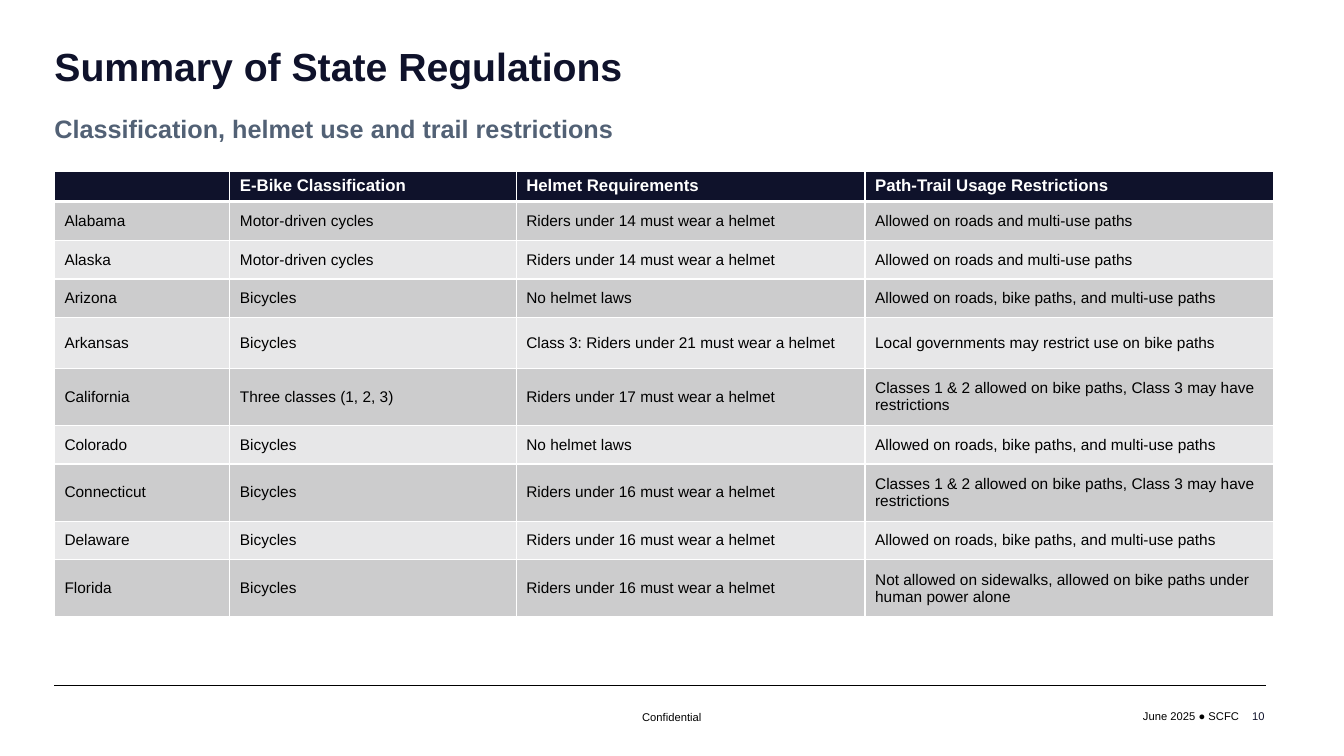
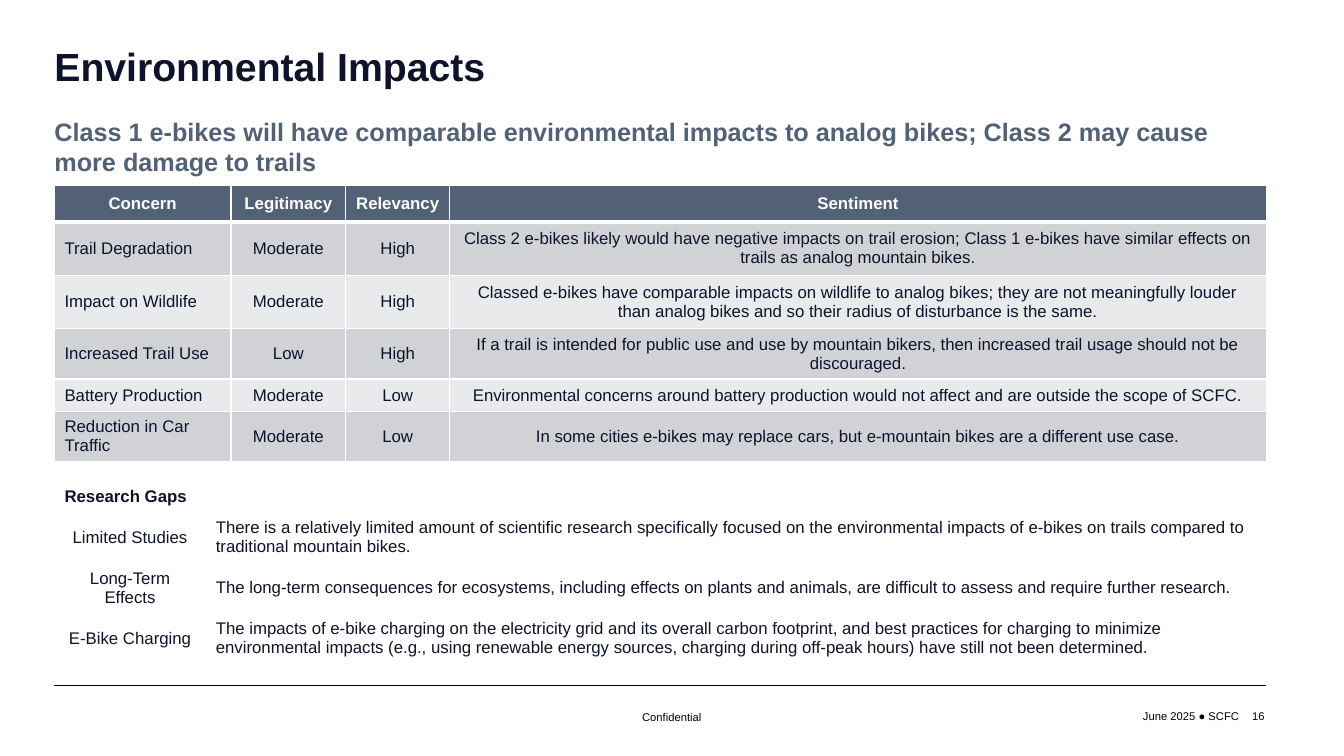
"""Builds two slides of an e-bike policy briefing."""
from dataclasses import dataclass

from lxml import etree
from pptx import Presentation
from pptx.dml.color import RGBColor
from pptx.enum import shapes, text
from pptx.oxml import ns
from pptx.util import Inches, Pt

LEFT, CENTER, RIGHT = text.PP_ALIGN.LEFT, text.PP_ALIGN.CENTER, text.PP_ALIGN.RIGHT
TOP, MIDDLE = text.MSO_ANCHOR.TOP, text.MSO_ANCHOR.MIDDLE


@dataclass(frozen=True)
class Theme:
    """Colours, type sizes and margins shared by the slides."""
    font: str = "Arial"
    navy: str = "0F122B"
    slate: str = "526175"
    black: str = "000000"
    white: str = "FFFFFF"
    gray_bands: tuple = ("CCCCCD", "E7E7E8")
    cool_bands: tuple = ("D1D2D6", "E9EAEC")
    title: int = 28
    subtitle: int = 18
    body: int = 12
    compact: int = 11
    footer: int = 8
    left: float = 0.54
    width: float = 12.02


THEME = Theme()

STATE_COLUMNS = (1.74, 2.84, 3.46, 4.05)
STATE_HEIGHTS = (0.28, 0.38, 0.38, 0.38, 0.5, 0.55, 0.38, 0.55, 0.38, 0.55)
MULTI_USE = "Allowed on roads and multi-use paths"
ALL_PATHS = "Allowed on roads, bike paths, and multi-use paths"
BY_CLASS = "Classes 1 & 2 allowed on bike paths, Class 3 may have restrictions"
NO_HELMET = "No helmet laws"


def helmet_under(age):
    """Return the helmet rule for riders below an age."""
    return f"Riders under {age} must wear a helmet"


STATES = (
    ("", "E-Bike Classification", "Helmet Requirements", "Path-Trail Usage Restrictions"),
    ("Alabama", "Motor-driven cycles", helmet_under(14), MULTI_USE),
    ("Alaska", "Motor-driven cycles", helmet_under(14), MULTI_USE),
    ("Arizona", "Bicycles", NO_HELMET, ALL_PATHS),
    ("Arkansas", "Bicycles", f"Class 3: {helmet_under(21)}",
     "Local governments may restrict use on bike paths"),
    ("California", "Three classes (1, 2, 3)", helmet_under(17), BY_CLASS),
    ("Colorado", "Bicycles", NO_HELMET, ALL_PATHS),
    ("Connecticut", "Bicycles", helmet_under(16), BY_CLASS),
    ("Delaware", "Bicycles", helmet_under(16), ALL_PATHS),
    ("Florida", "Bicycles", helmet_under(16),
     "Not allowed on sidewalks, allowed on bike paths under human power alone"),
)

CONCERN_COLUMNS = (1.75, 1.14, 1.03, 8.1)
CONCERN_HEIGHTS = (0.36, 0.53, 0.53, 0.48, 0.32, 0.48)
CONCERNS = (
    ("Concern", "Legitimacy", "Relevancy", "Sentiment"),
    ("Trail Degradation", "Moderate", "High",
     "Class 2 e-bikes likely would have negative impacts on trail erosion; Class 1 e-bikes "
     "have similar effects on trails as analog mountain bikes."),
    ("Impact on Wildlife", "Moderate", "High",
     "Classed e-bikes have comparable impacts on wildlife to analog bikes; they are not "
     "meaningfully louder than analog bikes and so their radius of disturbance is the same."),
    ("Increased Trail Use", "Low", "High",
     "If a trail is intended for public use and use by mountain bikers, then increased trail "
     "usage should not be discouraged."),
    ("Battery Production", "Moderate", "Low",
     "Environmental concerns around battery production would not affect and are outside "
     "the scope of SCFC."),
    ("Reduction in Car Traffic", "Moderate", "Low",
     "In some cities e-bikes may replace cars, but e-mountain bikes are a different use case."),
)

GAP_COLUMNS = (1.5, 10.52)
GAP_HEIGHTS = (0.29, 0.48, 0.48, 0.48)
GAPS = (
    ("Research Gaps", ""),
    ("Limited Studies",
     "There is a relatively limited amount of scientific research specifically focused on the "
     "environmental impacts of e-bikes on trails compared to traditional mountain bikes."),
    ("Long-Term Effects",
     "The long-term consequences for ecosystems, including effects on plants and animals, "
     "are difficult to assess and require further research."),
    ("E-Bike Charging",
     "The impacts of e-bike charging on the electricity grid and its overall carbon footprint, "
     "and best practices for charging to minimize environmental impacts (e.g., using renewable "
     "energy sources, charging during off-peak hours) have still not been determined."),
)


def write(frame, words, size=THEME.body, color=THEME.navy, bold=False, align=LEFT):
    """Put one formatted paragraph in a text frame."""
    para = frame.paragraphs[0]
    para.alignment = align
    para.font.size = Pt(size)
    if words:
        span = para.add_run()
        span.text = words
        span.font.name = THEME.font
        span.font.size = Pt(size)
        span.font.bold = bold
        span.font.color.rgb = RGBColor.from_string(color)


def set_insets(target, across, down):
    """Set the inner margins of a text frame or table cell."""
    target.margin_left = target.margin_right = Inches(across)
    target.margin_top = target.margin_bottom = Inches(down)


def add_text(slide, words, place, across=0.1, anchor=MIDDLE, wrap=True, **style):
    """Add a text box."""
    frame = slide.shapes.add_textbox(*map(Inches, place)).text_frame
    frame.word_wrap = wrap
    frame.vertical_anchor = anchor
    set_insets(frame, across, 0.05)
    write(frame, words, **style)


def add_borders(cell, bottom):
    """Draw white cell borders with a chosen bottom weight."""
    properties = cell._tc.get_or_add_tcPr()
    for side, weight in (("lnL", 1), ("lnR", 1), ("lnT", 1), ("lnB", bottom)):
        line = etree.SubElement(properties, ns.qn(f"a:{side}"), w=str(Pt(weight)))
        fill = etree.SubElement(line, ns.qn("a:solidFill"))
        etree.SubElement(fill, ns.qn("a:srgbClr"), val=THEME.white)


def add_grid(slide, rows, top, columns, heights):
    """Add an empty table of the given column widths and row heights."""
    table = slide.shapes.add_table(
        len(rows), len(columns), Inches(THEME.left), Inches(top),
        Inches(sum(columns)), Inches(sum(heights))).table
    for column, width in zip(table.columns, columns):
        column.width = Inches(width)
    for row, height in zip(table.rows, heights):
        row.height = Inches(height)
    return table


def add_banded_table(slide, rows, top, columns, heights, header, bands, aligns,
                     header_anchor=MIDDLE, padding=0.05, **body):
    """Add a table with a dark header and alternating row fills."""
    table = add_grid(slide, rows, top, columns, heights)
    for r, row in enumerate(rows):
        for c, words in enumerate(row):
            cell = table.cell(r, c)
            add_borders(cell, 1 if r else 3)
            cell.fill.solid()
            cell.fill.fore_color.rgb = RGBColor.from_string(bands[(r - 1) % 2] if r else header)
            cell.vertical_anchor = MIDDLE if r else header_anchor
            set_insets(cell, 0.1, padding if r else 0.05)
            if r:
                write(cell.text_frame, words, align=aligns[c], **body)
            else:
                write(cell.text_frame, words, color=THEME.white, bold=True, align=aligns[-1])


def add_plain_table(slide, rows, top, columns, heights):
    """Add an unfilled table with one heading across its first row."""
    table = add_grid(slide, rows, top, columns, heights)
    table.cell(0, 0).merge(table.cell(0, len(columns) - 1))
    for r, row in enumerate(rows):
        for c, words in enumerate(row):
            cell = table.cell(r, c)
            cell.fill.background()
            cell.vertical_anchor = MIDDLE
            set_insets(cell, 0.1, 0.05)
            write(cell.text_frame, words, bold=r == 0, align=CENTER if r and c == 0 else LEFT)


def add_footer(slide, number, color):
    """Add the rule, footer labels and page number."""
    rule = slide.shapes.add_connector(
        shapes.MSO_CONNECTOR.STRAIGHT, Inches(THEME.left), Inches(6.8),
        Inches(THEME.left + THEME.width), Inches(6.8))
    rule.line.color.rgb = RGBColor.from_string(THEME.black)
    rule.line.width = Pt(1)
    etree.SubElement(rule._element.spPr, ns.qn("a:effectLst"))
    label = dict(anchor=TOP, wrap=False, size=THEME.footer, color=THEME.black)
    add_text(slide, "June 2025 ● SCFC", (11.19, 6.99, 1.2, 0.24), align=RIGHT, **label)
    add_text(slide, "Confidential", (6.27, 7, 0.8, 0.24), **label)
    add_text(slide, str(number), (9.64, 6.9, 3, 0.4), size=THEME.footer, color=color, align=RIGHT)


def add_page(deck, title, subtitle, place, number, number_color):
    """Add a slide with its title, subtitle and footer."""
    slide = deck.slides.add_slide(deck.slide_layouts[5])
    box = slide.shapes.title
    box.left, box.top = Inches(THEME.left), Inches(0.42)
    box.width, box.height = Inches(THEME.width), Inches(0.63)
    box.text_frame.vertical_anchor = TOP
    set_insets(box.text_frame, 0, 0)
    write(box.text_frame, title, size=THEME.title, bold=True)
    add_text(slide, subtitle, place, across=0, size=THEME.subtitle, color=THEME.slate, bold=True)
    add_footer(slide, number, number_color)
    return slide


def main():
    """Build and save the deck."""
    deck = Presentation()
    deck.slide_width, deck.slide_height = Inches(13.33), Inches(7.5)

    page = add_page(deck, "Summary of State Regulations",
                    "Classification, helmet use and trail restrictions",
                    (THEME.left, 1.07, 6.12, 0.4), 10, THEME.navy)
    add_banded_table(page, STATES, 1.7, STATE_COLUMNS, STATE_HEIGHTS, THEME.navy,
                     THEME.gray_bands, (LEFT,) * 4, header_anchor=TOP, padding=0.1,
                     size=THEME.compact, color=THEME.black)

    page = add_page(deck, "Environmental Impacts",
                    "Class 1 e-bikes will have comparable environmental impacts to analog bikes; "
                    "Class 2 may cause more damage to trails",
                    (THEME.left, 1.25, 11.56, 0.4), 16, THEME.black)
    add_banded_table(page, CONCERNS, 1.84, CONCERN_COLUMNS, CONCERN_HEIGHTS, THEME.slate,
                     THEME.cool_bands, (LEFT, CENTER, CENTER, CENTER))
    add_plain_table(page, GAPS, 4.78, GAP_COLUMNS, GAP_HEIGHTS)

    deck.save("out.pptx")


if __name__ == "__main__":
    main()
